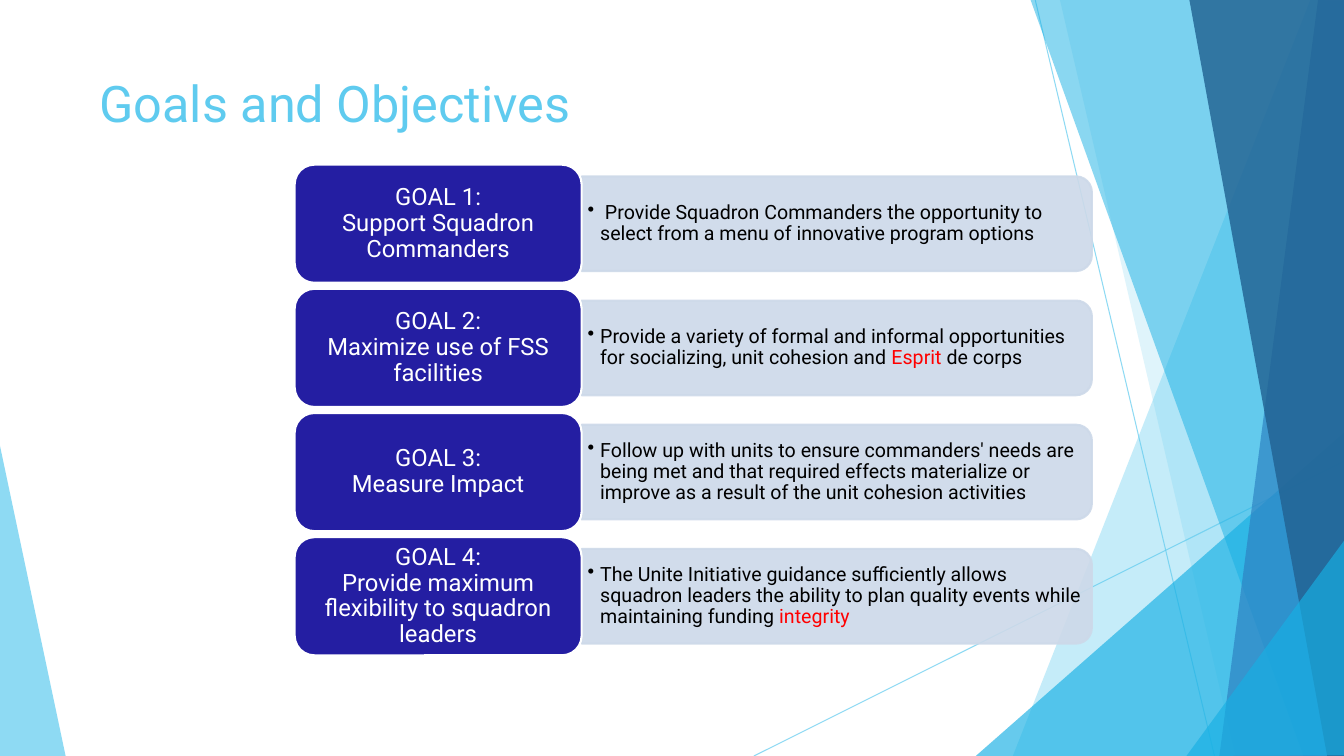
"""Build the Goals and Objectives slide: four goals, each with its objective."""
import lxml.etree
import pptx
import pptx.dml.color
import pptx.enum.shapes
import pptx.enum.text
import pptx.oxml.ns
import pptx.util

Pt = pptx.util.Pt
RGBColor = pptx.dml.color.RGBColor
SHAPE = pptx.enum.shapes.MSO_SHAPE
ANCHOR = pptx.enum.text.MSO_ANCHOR
qn = pptx.oxml.ns.qn

SKY = RGBColor(0x5F, 0xCB, 0xEF)
CYAN = RGBColor(0x17, 0xB0, 0xE4)
BLUE = RGBColor(0x2E, 0x83, 0xC3)
NAVY = RGBColor(0x22, 0x62, 0x92)
INDIGO = RGBColor(0x24, 0x1E, 0xA2)
MIST = RGBColor(0xCD, 0xD9, 0xE9)
WHITE = RGBColor(0xFF, 0xFF, 0xFF)
BLACK = RGBColor(0, 0, 0)
RED = RGBColor(0xFF, 0, 0)
FONT = "Roboto"


def set_opacity(shape, percent):
    for colour in shape.element.spPr.iter(qn("a:srgbClr")):
        lxml.etree.SubElement(colour, qn("a:alpha"), val=str(percent * 1000))


def set_frame(frame, side, top, anchor):
    frame.word_wrap = True
    frame.margin_left = frame.margin_right = Pt(side)
    frame.margin_top = frame.margin_bottom = Pt(top)
    frame.vertical_anchor = anchor


deck = pptx.Presentation()
deck.slide_width, deck.slide_height = Pt(960), Pt(540)
slide = deck.slides.add_slide(deck.slide_layouts[6])
shapes = slide.shapes

RAYS = [((538.5, 540), (961, 329)), ((739.5, 0), (867.5, 540))]
FACETS = [
    (SKY, 36, [(936, 0), (723.5, 540), (961.5, 540.5), (961, 0.5)]),
    (SKY, 20, [(757, -0.5), (882.5, 540), (961, 540), (961, -0.5)]),
    (CYAN, 66, [(697, 540), (960, 309), (960.5, 540)]),
    (CYAN, 50, [(736, -0.5), (931, 540), (961, 539.5), (961, -0.5)]),
    (BLUE, 70, [(941.5, -0.5), (871, 540), (961, 540), (960.5, -0.5)]),
    (NAVY, 82, [(849.5, -0.5), (948, 540), (961.5, 540), (960.5, -0.5)]),
    (CYAN, 66, [(847.5, 540), (961, 385), (961.5, 539.5)]),
]
LEFT_FACET = (SKY, 70, [(-0.5, 316), (47, 540.5), (-0.5, 540)])

for start, end in RAYS:
    ray = shapes.add_connector(
        pptx.enum.shapes.MSO_CONNECTOR.STRAIGHT, *map(Pt, start + end))
    ray.line.color.rgb = SKY
    ray.line.width = Pt(0.75)
    set_opacity(ray, 70)
    lxml.etree.SubElement(ray.element.spPr, qn("a:effectLst"))

for colour, opacity, corners in [LEFT_FACET] + FACETS:
    points = [(Pt(x), Pt(y)) for x, y in corners]
    outline = shapes.build_freeform(*points[0])
    outline.add_line_segments(points[1:], close=True)
    facet = outline.convert_to_shape()
    facet.shadow.inherit = False
    facet.fill.solid()
    facet.fill.fore_color.rgb = colour
    facet.line.fill.background()
    set_opacity(facet, opacity)

title = shapes.add_textbox(Pt(64), Pt(48), Pt(667), Pt(104)).text_frame
set_frame(title, 7.2, 3.6, ANCHOR.TOP)
heading = title.paragraphs[0]
heading.text = "Goals and Objectives"
heading.font.name = FONT
heading.font.size = Pt(36)
heading.font.color.rgb = SKY

GOALS = [
    ("Support Squadron Commanders",
     [(" Provide Squadron Commanders the opportunity to select from a menu of "
       "innovative program options", BLACK)]),
    ("Maximize use of FSS facilities",
     [("Provide a variety of formal and informal opportunities for socializing, "
       "unit cohesion and ", BLACK), ("Esprit", RED), (" de corps", BLACK)]),
    ("Measure Impact",
     [("Follow up with units to ensure commanders' needs are being met and that "
       "required effects materialize or improve as a result of the unit cohesion "
       "activities", BLACK)]),
    ("Provide maximum flexibility to squadron leaders",
     [("The Unite Initiative guidance sufficiently allows squadron leaders the "
       "ability to plan quality events while maintaining funding ", BLACK),
      ("integrity", RED)]),
]
FIRST_MIDDLE, ROW_STEP = 159.8, 88.7
GOAL_LEFT, GOAL_WIDTH, GOAL_HEIGHT = 210.5, 205, 84.4
PANEL_LEFT = GOAL_LEFT + GOAL_WIDTH
PANEL_LENGTH, PANEL_DEPTH = 364.4, 67.6
OBJECTIVE_WIDTH, OBJECTIVE_HEIGHT = 361.2, 61

for row, (goal, objective) in enumerate(GOALS):
    middle = FIRST_MIDDLE + row * ROW_STEP

    panel = shapes.add_shape(
        SHAPE.ROUND_2_SAME_RECTANGLE,
        Pt(PANEL_LEFT + (PANEL_LENGTH - PANEL_DEPTH) / 2),
        Pt(middle - PANEL_LENGTH / 2), Pt(PANEL_DEPTH), Pt(PANEL_LENGTH))
    panel.rotation = 90
    panel.shadow.inherit = False
    panel.fill.solid()
    panel.fill.fore_color.rgb = MIST
    panel.line.color.rgb = MIST
    panel.line.width = Pt(1.5)
    set_opacity(panel, 90)

    objective_frame = shapes.add_textbox(
        Pt(PANEL_LEFT), Pt(middle - OBJECTIVE_HEIGHT / 2),
        Pt(OBJECTIVE_WIDTH), Pt(OBJECTIVE_HEIGHT)).text_frame
    set_frame(objective_frame, 4.2, 2.1, ANCHOR.MIDDLE)
    bullet = objective_frame.paragraphs[0]
    bullet.line_spacing = 0.9
    bullet.font.name = FONT
    bullet.font.size = Pt(14)
    for words, colour in objective:
        run = bullet.add_run()
        run.text = words
        run.font.color.rgb = colour
    properties = bullet._p.get_or_add_pPr()
    properties.set("marL", str(Pt(9)))
    properties.set("indent", str(Pt(-9)))
    mark = lxml.etree.Element(qn("a:buChar"), char="•")
    properties.find(qn("a:defRPr")).addprevious(mark)

    goal_box = shapes.add_shape(
        SHAPE.ROUNDED_RECTANGLE, Pt(GOAL_LEFT), Pt(middle - GOAL_HEIGHT / 2),
        Pt(GOAL_WIDTH), Pt(GOAL_HEIGHT))
    goal_box.shadow.inherit = False
    goal_box.fill.solid()
    goal_box.fill.fore_color.rgb = INDIGO
    goal_box.line.color.rgb = WHITE
    goal_box.line.width = Pt(1.5)
    set_frame(goal_box.text_frame, 5, 2.7, ANCHOR.MIDDLE)
    label = goal_box.text_frame.paragraphs[0]
    label.text = f"GOAL {row + 1}:\v{goal}"
    label.alignment = pptx.enum.text.PP_ALIGN.CENTER
    label.line_spacing = 0.9
    label.font.name = FONT
    label.font.size = Pt(17)
    label.font.color.rgb = WHITE

deck.save("out.pptx")
